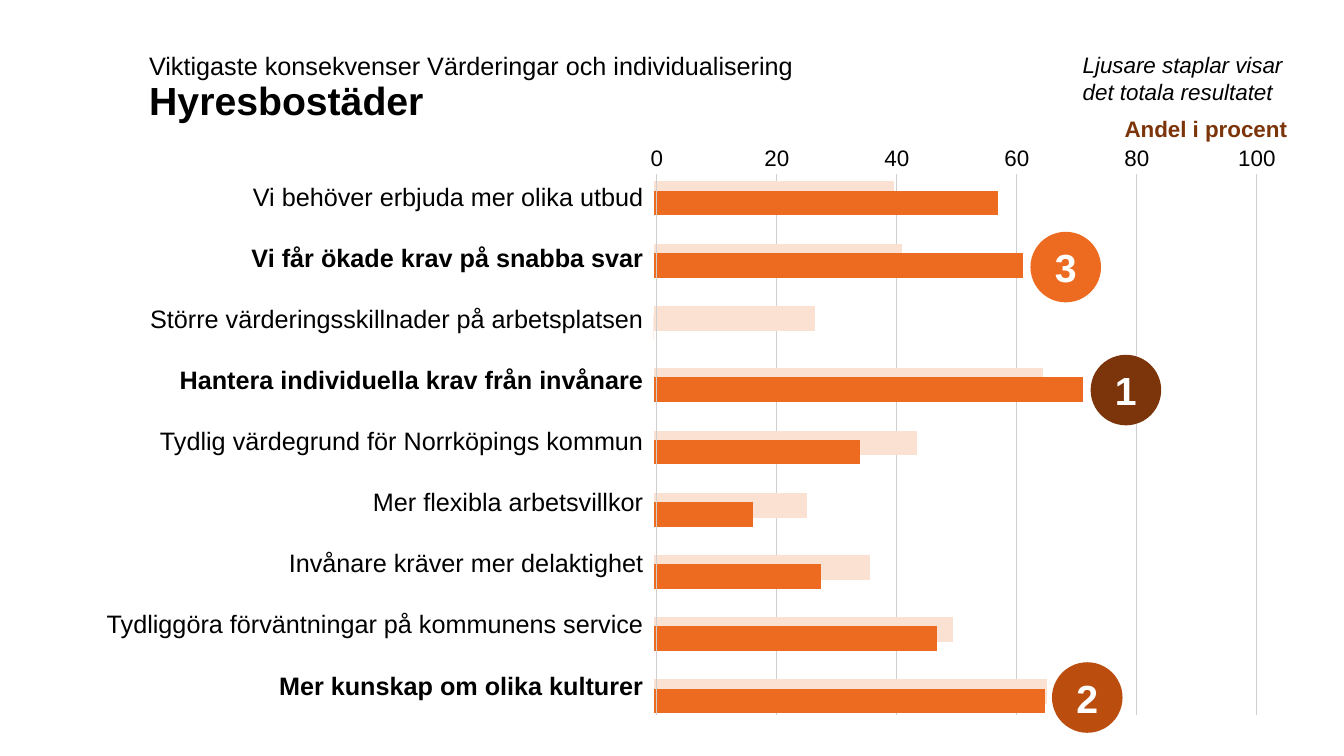
from lxml import etree
from pptx import Presentation
from pptx import util as u
from pptx.chart.data import CategoryChartData
from pptx.dml.color import RGBColor
from pptx.enum import chart as ch, shapes, text
from pptx.oxml import parse_xml
from pptx.oxml.ns import nsdecls, qn

BLACK = RGBColor(0, 0, 0)
WHITE = RGBColor(0xFF, 0xFF, 0xFF)
GRID = RGBColor(0xD0, 0xCE, 0xCE)
PALE = RGBColor(0xFB, 0xE1, 0xD2)
ORANGE = RGBColor(0xED, 0x6B, 0x20)
RUST = RGBColor(0xBB, 0x4E, 0x0F)
BROWN = RGBColor(0x7C, 0x34, 0x0A)

CONSEQUENCES = [
    # label, total result, rental housing
    ("Vi behöver erbjuda mer olika utbud", 61, 80),
    ("Vi får ökade krav på snabba svar", 63, 86),
    ("Större värderingsskillnader på arbetsplatsen", 41, 0),
    ("Hantera individuella krav från invånare", 99, 100),
    ("Tydlig värdegrund för Norrköpings kommun", 67, 48),
    ("Mer flexibla arbetsvillkor", 39, 23),
    ("Invånare kräver mer delaktighet", 55, 39),
    ("Tydliggöra förväntningar på kommunens service", 76, 66),
    ("Mer kunskap om olika kulturer", 100, 91),
]
RANKS = {8: ("2", RUST), 3: ("1", BROWN), 1: ("3", ORANGE)}

TOTAL_MAX, RENTAL_MAX = 154, 141
CHART_LEFT, CHART_WIDTH, CHART_HEIGHT = 6.36, 6.26, 5.79
PLOT_INSET = 0.02
PLOT_LEFT = CHART_LEFT + PLOT_INSET * CHART_WIDTH
PLOT_WIDTH = (1 - 2 * PLOT_INSET) * CHART_WIDTH
AXIS_LEFT, TICK_STEP = 6.51, 1.19
GRID_TOP, GRID_BOTTOM = 1.73, 7.09
ROW = 0.61
CIRCLE = 0.7


def box(left, top, width, height):
    return [u.Inches(n) for n in (left, top, width, height)]


def write(frame, words, size, color=BLACK, bold=False, italic=False,
          align=text.PP_ALIGN.LEFT):
    frame.text = words
    paragraph = frame.paragraphs[0]
    paragraph.alignment = align
    font = paragraph.runs[0].font
    font.name, font.size = "Arial", u.Pt(size)
    font.bold, font.italic = bold, italic
    font.color.rgb = color


def add_label(slide, place, words, size, wrap=True,
              anchor=text.MSO_ANCHOR.MIDDLE, **style):
    frame = slide.shapes.add_textbox(*box(*place)).text_frame
    frame.word_wrap = wrap
    frame.vertical_anchor = anchor
    write(frame, words, size, **style)


def add_gridline(slide, tick):
    x = u.Inches(AXIS_LEFT + tick * TICK_STEP)
    line = slide.shapes.add_connector(
        shapes.MSO_CONNECTOR.STRAIGHT,
        x, u.Inches(GRID_TOP), x, u.Inches(GRID_BOTTOM))
    line.line.color.rgb = GRID
    line.line.width = u.Pt(0.75)
    etree.SubElement(line.element.spPr, qn("a:effectLst"))


def clear_and_place_plot(chart):
    """Make the chart see-through and fix the inner plot area."""
    blank = (f'<c:spPr {nsdecls("c", "a")}><a:noFill/>'
             '<a:ln><a:noFill/></a:ln></c:spPr>')
    chart.element.find(qn("c:chart")).addnext(parse_xml(blank))
    plot_area = chart.element.find(".//" + qn("c:plotArea"))
    plot_area.append(parse_xml(blank))
    for layout in plot_area.findall(qn("c:layout")):
        plot_area.remove(layout)
    share = 1 - 2 * PLOT_INSET
    settings = [("layoutTarget", "inner"), ("xMode", "edge"),
                ("yMode", "edge"), ("x", PLOT_INSET), ("y", PLOT_INSET),
                ("w", share), ("h", share)]
    parts = "".join(f'<c:{tag} val="{val}"/>' for tag, val in settings)
    plot_area.insert(0, parse_xml(
        f'<c:layout {nsdecls("c")}><c:manualLayout>{parts}'
        '</c:manualLayout></c:layout>'))


def add_bars(slide, top, values, maximum, color):
    data = CategoryChartData()
    data.categories = [str(n + 1) for n in range(len(values))]
    data.add_series("Series 1", values)
    chart = slide.shapes.add_chart(
        ch.XL_CHART_TYPE.BAR_CLUSTERED,
        *box(CHART_LEFT, top, CHART_WIDTH, CHART_HEIGHT), data).chart
    chart.has_title = chart.has_legend = False
    chart.font.name, chart.font.size = "Arial", u.Pt(10)
    chart.font.color.rgb = BLACK
    for axis in (chart.category_axis, chart.value_axis):
        axis.has_major_gridlines = False
        axis.visible = False
    chart.category_axis.reverse_order = True
    chart.value_axis.minimum_scale = 0
    chart.value_axis.maximum_scale = maximum
    plot = chart.plots[0]
    plot.gap_width = 150
    plot.vary_by_categories = False
    fill = plot.series[0].format.fill
    fill.solid()
    fill.fore_color.rgb = color
    clear_and_place_plot(chart)


def add_consequence_table(slide):
    count = len(CONSEQUENCES)
    table = slide.shapes.add_table(
        count, 1, *box(0.33, 1.65, 6.06, 5.46)).table
    table.first_row = table.horz_banding = False
    for index, (label, _, _) in enumerate(CONSEQUENCES):
        cell = table.cell(index, 0)
        cell.fill.background()
        cell.vertical_anchor = text.MSO_ANCHOR.MIDDLE
        cell.margin_left = cell.margin_right = u.Inches(0.01)
        cell.margin_top, cell.margin_bottom = u.Inches(0.01), 0
        write(cell.text_frame, label, 18, bold=index in RANKS,
              align=text.PP_ALIGN.RIGHT)


def add_rank(slide, row, rank, color):
    """Put a numbered circle just past the end of the bar in a row."""
    bar_end = PLOT_LEFT + CONSEQUENCES[row][2] / RENTAL_MAX * PLOT_WIDTH
    circle = slide.shapes.add_shape(
        shapes.MSO_SHAPE.OVAL,
        *box(bar_end + 0.07, 1.69 + row * ROW, CIRCLE, CIRCLE))
    circle.shadow.inherit = False
    circle.fill.solid()
    circle.fill.fore_color.rgb = color
    circle.line.fill.background()
    circle.text_frame.vertical_anchor = text.MSO_ANCHOR.MIDDLE
    write(circle.text_frame, rank, 28, WHITE, bold=True,
          align=text.PP_ALIGN.CENTER)


def set_title(slide, words):
    title = slide.shapes.title
    title.left, title.top, title.width, title.height = box(
        1.38, 0.7, 11.07, 0.64)
    frame = title.text_frame
    frame.auto_size = text.MSO_AUTO_SIZE.NONE
    frame.vertical_anchor = text.MSO_ANCHOR.MIDDLE
    write(frame, words, 28, bold=True)
    frame.paragraphs[0].line_spacing = 0.9


def main():
    deck = Presentation()
    deck.slide_width, deck.slide_height = u.Inches(13.33), u.Inches(7.5)
    slide = deck.slides.add_slide(deck.slide_layouts[5])
    set_title(slide, "Hyresbostäder")

    for tick in range(1, 5):
        add_gridline(slide, tick)
    _, totals, rentals = zip(*CONSEQUENCES)
    add_bars(slide, 1.5, totals, TOTAL_MAX, PALE)
    add_bars(slide, 1.59, rentals, RENTAL_MAX, ORANGE)
    add_consequence_table(slide)
    for tick in (0, 5):
        add_gridline(slide, tick)
    for tick in range(6):
        add_label(slide, (6.12 + tick * TICK_STEP, 1.38, 0.79, 0.4),
                  str(tick * 20), 16, wrap=False,
                  anchor=text.MSO_ANCHOR.TOP, align=text.PP_ALIGN.CENTER)

    add_label(slide, (1.38, 0.51, 8.3, 0.27),
              "Viktigaste konsekvenser Värderingar och individualisering", 18)
    add_label(slide, (11.04, 1.09, 1.84, 0.37), "Andel i procent", 16,
              wrap=False, anchor=text.MSO_ANCHOR.TOP, color=BROWN, bold=True,
              align=text.PP_ALIGN.CENTER)
    add_label(slide, (10.64, 0.48, 2.46, 0.59),
              "Ljusare staplar visar det totala resultatet", 16, italic=True)
    for row, (rank, color) in RANKS.items():
        add_rank(slide, row, rank, color)
    deck.save("out.pptx")


if __name__ == "__main__":
    main()
